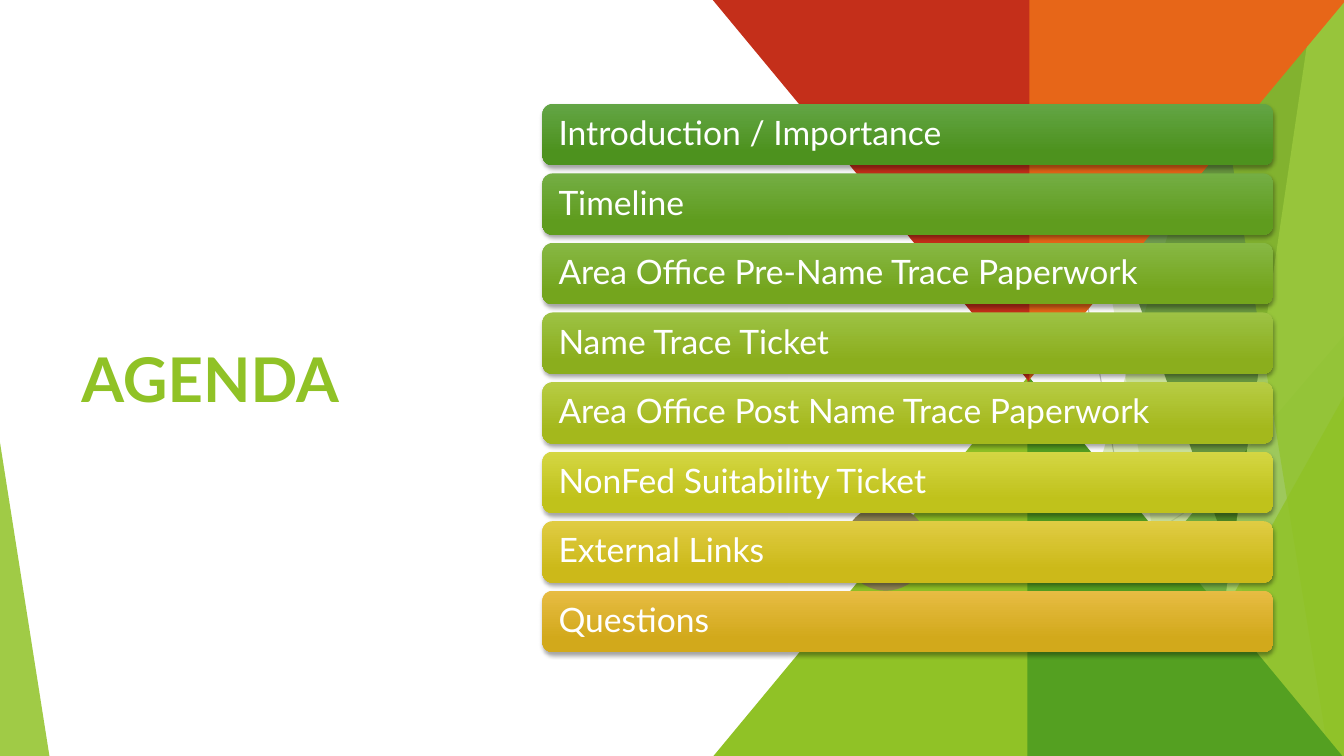
from lxml.etree import SubElement
from pptx import Presentation
from pptx.dml.color import RGBColor
from pptx.enum.shapes import MSO_CONNECTOR, MSO_SHAPE
from pptx.enum.text import MSO_ANCHOR
from pptx.oxml.ns import qn
from pptx.util import Inches, Pt

FONT = "Lato"
COLORS = {
    "lime": "90C226", "green": "54A021", "dark": "3F7819", "pale": "C0E474",
    "orange": "E76618", "red": "C42F1A", "olive": "918655",
    "grey": "BFBFBF", "silver": "D9D9D9", "white": "FFFFFF", "black": "000000",
}
# Text, gradient top, gradient bottom
AGENDA = [
    ("Introduction / Importance", "63A545", "4D921E"),
    ("Timeline", "74AE44", "5F9C1E"),
    ("Area Office Pre-Name Trace Paperwork", "87B844", "74A51D"),
    ("Name Trace Ticket", "9DC244", "8BAE1D"),
    ("Area Office Post Name Trace Paperwork", "B7CC44", "A4B81C"),
    ("NonFed Suitability Ticket", "D4D643", "C0C21B"),
    ("External Links", "E0CC43", "CCB919"),
    ("Questions", "E7BC43", "D2A91B"),
]
TOP, END = -0.01, 7.5
LEFT, FIRST, STEP = 5.38, 1.03, 0.69


def rgb(name):
    return RGBColor.from_string(COLORS[name])


def paint(shape, color, alpha=100):
    """Give a flat fill, alpha percent opaque, without line or shadow."""
    shape.shadow.inherit = False
    shape.line.fill.background()
    shape.fill.solid()
    shape.fill.fore_color.rgb = rgb(color)
    if alpha < 100:
        tone = shape._element.spPr.find(qn("a:solidFill"))[0]
        SubElement(tone, qn("a:alpha"), val=str(alpha * 1000))


def add_line(slide, start, end, color):
    ends = [Inches(v) for v in start + end]
    line = slide.shapes.add_connector(MSO_CONNECTOR.STRAIGHT, *ends)
    line.line.color.rgb = rgb(color)
    line.line.width = Pt(0.75)
    SubElement(line._element.spPr, qn("a:effectLst"))


def add_poly(slide, points, color, alpha=100):
    first, *rest = [(Inches(x), Inches(y)) for x, y in points]
    draft = slide.shapes.build_freeform(*first)
    draft.add_line_segments(rest, close=True)
    paint(draft.convert_to_shape(), color, alpha)


def add_band(slide, top, base, color, alpha):
    """Fill from a slanted left edge to the right side of the slide."""
    points = [(top, TOP), (13.33, TOP), (13.33, END), (base, END)]
    add_poly(slide, points, color, alpha)


def add_peak(slide, box, apex, color, alpha):
    shape = slide.shapes.add_shape(
        MSO_SHAPE.ISOSCELES_TRIANGLE, *[Inches(v) for v in box])
    shape.adjustments[0] = apex
    paint(shape, color, alpha)


def add_dot(slide, left, top, size, color):
    box = [Inches(v) for v in (left, top, size, size)]
    paint(slide.shapes.add_shape(MSO_SHAPE.OVAL, *box), color)


def set_text(shape, text, size, color, bold=False):
    frame = shape.text_frame
    frame.word_wrap = True
    frame.vertical_anchor = MSO_ANCHOR.MIDDLE
    frame.text = text
    para = frame.paragraphs[0]
    font = para.runs[0].font
    font.name, font.size, font.bold = FONT, Pt(size), bold
    font.color.rgb = rgb(color)
    return frame, para


def add_title(slide, text):
    box = [Inches(v) for v in (0.71, 1.51, 3.88, 4.48)]
    set_text(slide.shapes.add_textbox(*box), text, 44, "lime", True)


def add_shade(shape):
    """Drop a soft shadow straight down."""
    shape.shadow.inherit = False
    effects = shape._element.spPr.find(qn("a:effectLst"))
    shade = SubElement(
        effects, qn("a:outerShdw"), blurRad=str(Pt(3)), dist=str(Pt(2)),
        dir="5400000", algn="ctr", rotWithShape="0")
    tone = SubElement(shade, qn("a:srgbClr"), val=COLORS["black"])
    SubElement(tone, qn("a:alpha"), val="35000")


def add_bar(slide, top, text, light, deep):
    box = [Inches(v) for v in (LEFT, top, 7.25, 0.61)]
    bar = slide.shapes.add_shape(MSO_SHAPE.ROUNDED_RECTANGLE, *box)
    bar.line.fill.background()
    bar.fill.gradient()
    bar.fill.gradient_angle = 270
    for stop, place, tone in zip(
            bar.fill.gradient_stops, (0, 0.78), (light, deep)):
        stop.position = place
        stop.color.rgb = RGBColor.from_string(tone)
    add_shade(bar)
    frame, para = set_text(bar, text, 24, "white")
    frame.margin_left = frame.margin_right = Inches(0.13)
    frame.margin_top = frame.margin_bottom = Inches(0.1)
    para.alignment = 1
    para.line_spacing = 0.9


def add_facets(slide):
    """Draw the translucent planes at both sides of the slide."""
    add_line(slide, (10.25, 0), (11.58, 7.5), "grey")
    add_line(slide, (13.33, 4.03), (8.12, 7.5), "silver")
    add_band(slide, 12.28, 10.04, "lime", 30)
    add_band(slide, 10.5, 11.83, "lime", 20)
    add_peak(slide, (9.77, 3.33, 3.56, 4.17), 1, "green", 72)
    add_band(slide, 10.21, 12.91, "dark", 70)
    add_band(slide, 13.03, 11.92, "pale", 70)
    add_band(slide, 11.96, 13.18, "lime", 65)
    add_peak(slide, (11.34, 3.93, 1.99, 3.57), 1, "lime", 80)
    add_peak(slide, (0, 4.39, 0.49, 3.11), 0, "lime", 85)


def add_wedges(slide):
    """Draw the four solid triangles that meet in the middle."""
    for mid, side, tip, edge, color in [
            (10.21, 7.06, 3.72, 7.52, "lime"),
            (10.19, 13.33, 3.72, 7.52, "green"),
            (10.19, 13.35, 3.79, 0, "orange"),
            (10.21, 7.07, 3.79, 0, "red")]:
        add_poly(slide, [(mid, tip), (side, edge), (mid, edge)], color)


def main():
    deck = Presentation()
    deck.slide_width, deck.slide_height = Inches(13.33), Inches(7.5)
    slide = deck.slides.add_slide(deck.slide_layouts[6])
    add_facets(slide)
    add_wedges(slide)
    add_dot(slide, 8.36, 5.01, 0.85, "olive")
    add_title(slide, "AGENDA")
    for row, (text, light, deep) in enumerate(AGENDA):
        add_bar(slide, FIRST + row * STEP, text, light, deep)
    deck.save("out.pptx")


if __name__ == "__main__":
    main()
